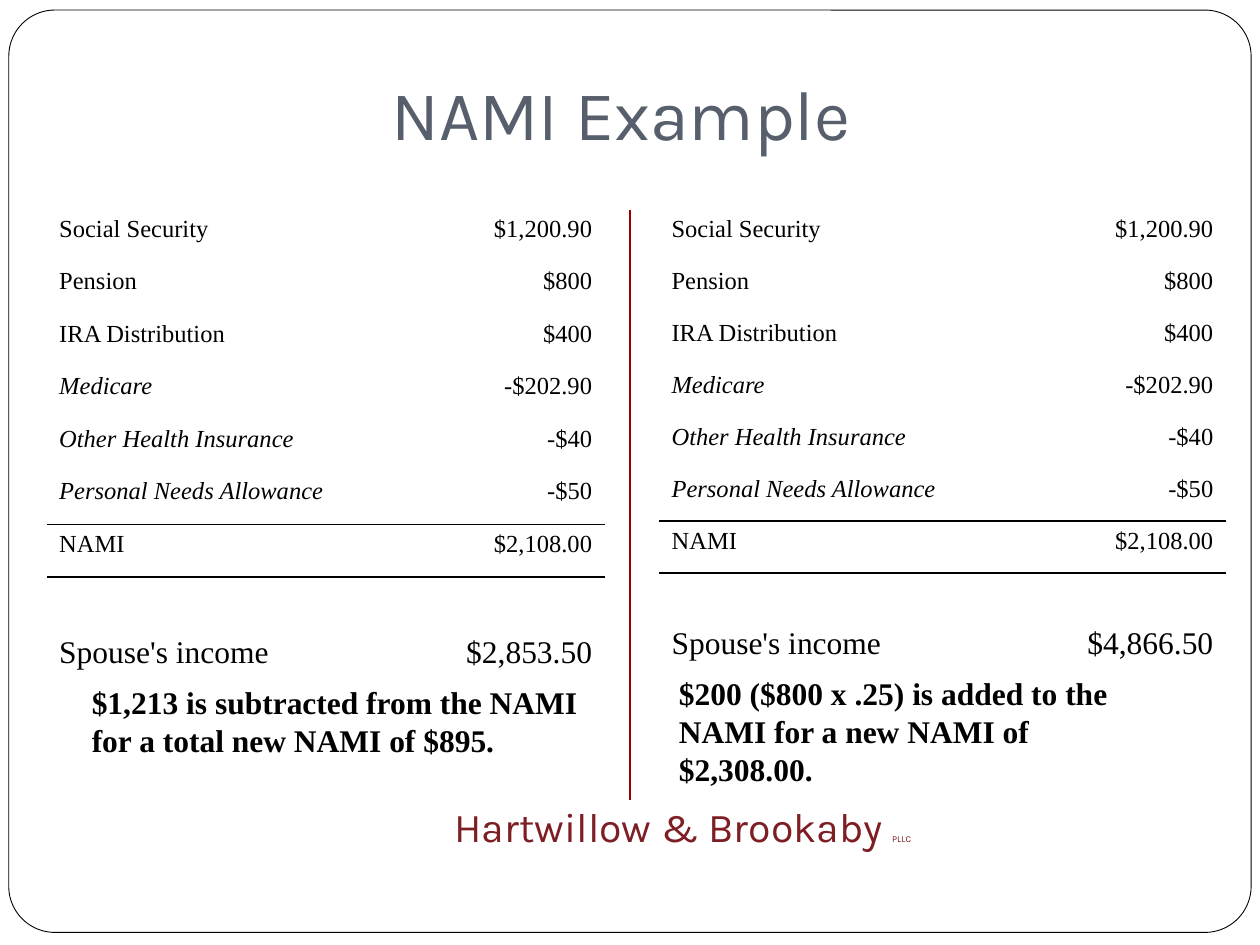
from lxml import etree
from pptx import Presentation
from pptx.dml.color import RGBColor
from pptx.enum.shapes import MSO_CONNECTOR, MSO_SHAPE
from pptx.enum.text import MSO_ANCHOR, PP_ALIGN
from pptx.oxml import parse_xml
from pptx.oxml.ns import nsdecls, qn
from pptx.util import Inches, Pt

COLORS = {"black": "000000", "white": "FFFFFF", "slate": "575F6D",
          "divider": "9A0000", "firm": "7D1D24"}
NO_TABLE_STYLE = "{2D5ABB26-0587-4C30-8999-92F81FD0307C}"


def rgb(name):
    return RGBColor.from_string(COLORS[name])


def style_runs(para, size, color="black", font="Times New Roman", bold=False, italic=False):
    for span in para.runs:
        span.font.name = font
        span.font.size = Pt(size)
        span.font.color.rgb = rgb(color)
        span.font.bold = bold
        span.font.italic = italic


deck = Presentation()
deck.slide_width, deck.slide_height = Inches(10), Inches(7.5)
page = deck.slides.add_slide(deck.slide_layouts[5])

frame = page.shapes.add_shape(MSO_SHAPE.ROUNDED_RECTANGLE,
                              Inches(0.07), Inches(0.08), Inches(9.86), Inches(7.32))
frame.adjustments[0] = 0.05
frame.shadow.inherit = False
frame.fill.solid()
frame.fill.fore_color.rgb = rgb("white")
frame.line.color.rgb = rgb("black")
frame.line.width = Pt(0.5)
page.shapes._spTree.insert(2, frame._element)

title = page.shapes.title
title.left, title.top, title.width, title.height = Inches(0.68), Inches(0.33), Inches(8.5), Inches(1)
title.text_frame.text = "NAMI Example"
title.text_frame.vertical_anchor = MSO_ANCHOR.BOTTOM
title.text_frame.margin_bottom = Inches(0.1)
title.text_frame.paragraphs[0].alignment = PP_ALIGN.CENTER
style_runs(title.text_frame.paragraphs[0], 40, "slate", "Karla")

budget = [("Social Security", "$1,200.90"), ("Pension", "$800"), ("IRA Distribution", "$400"),
          ("Medicare", "-$202.90"), ("Other Health Insurance", "-$40"),
          ("Personal Needs Allowance", "-$50"), ("NAMI", "$2,108.00"), ("", "")]
deductions = ("Medicare", "Other Health Insurance", "Personal Needs Allowance")
ruled_rows = ("Personal Needs Allowance", "NAMI")
left_heights = [Inches(4.17) // 10] * 10
right_heights = [Inches(2.89) // 7] * 7 + [Inches(0.37), Inches(0.7), Inches(0.41)]

examples = [
    (5.23, (3.16, 1.34), right_heights, "$4,866.50", (5.29, 5.3, 4),
     "$200 ($800 x .25) is added to the NAMI for a new NAMI of $2,308.00."),
    (0.37, (3.11, 1.32), left_heights, "$2,853.50", (0.63, 5.37, 4.25),
     "$1,213 is subtracted from the NAMI for a total new NAMI of $895."),
]
for left, widths, heights, spouse_income, note_place, note in examples:
    rows = budget + [("Spouse's income", spouse_income), ("", "")]
    table = page.shapes.add_table(len(rows), 2, Inches(left), Inches(1.66),
                                  Inches(sum(widths)), sum(heights)).table
    table.first_row = table.horz_banding = False
    table._tbl.tblPr.find(qn("a:tableStyleId")).text = NO_TABLE_STYLE
    for column, width in zip(table.columns, widths):
        column.width = Inches(width)
    for row, height, texts in zip(table.rows, heights, rows):
        row.height = height
        label = texts[0]
        for cell, text, align in zip(row.cells, texts, (PP_ALIGN.LEFT, PP_ALIGN.RIGHT)):
            cell.fill.background()
            para = cell.text_frame.paragraphs[0]
            if text:
                para.text = text
                para.alignment = align
                style_runs(para, 18 if label == "Spouse's income" else 14,
                           italic=text in deductions)
            else:
                etree.SubElement(para._p, qn("a:endParaRPr"), sz="1400")
            if label in ruled_rows:
                cell._tc.get_or_add_tcPr().insert(0, parse_xml(
                    f'<a:lnB {nsdecls("a")} w="{Pt(1)}"><a:solidFill>'
                    f'<a:srgbClr val="{COLORS["black"]}"/></a:solidFill></a:lnB>'))

    note_left, note_top, note_width = note_place
    box = page.shapes.add_textbox(Inches(note_left), Inches(note_top),
                                  Inches(note_width), Inches(0.71))
    box.text_frame.word_wrap = True
    box.text_frame.text = note
    style_runs(box.text_frame.paragraphs[0], 18, bold=True)

divider = page.shapes.add_connector(MSO_CONNECTOR.STRAIGHT,
                                    Inches(5), Inches(1.67), Inches(5), Inches(6.35))
divider.line.color.rgb = rgb("divider")
divider.line.width = Pt(0.75)
etree.SubElement(divider._element.spPr, qn("a:effectLst"))

firm = page.shapes.add_textbox(Inches(1.17), Inches(6.35), Inches(8.5), Inches(0.71))
firm.text_frame.word_wrap = True
firm.text_frame.vertical_anchor = MSO_ANCHOR.BOTTOM
firm.text_frame.margin_bottom = Inches(0.31)
para = firm.text_frame.paragraphs[0]
para.text = "Hartwillow & Brookaby "
para.add_run().text = "PLLC"
para.alignment = PP_ALIGN.CENTER
style_runs(para, 23.4, "firm", "Karla")
para.runs[1].font.size = Pt(5.2)

deck.save("out.pptx")
